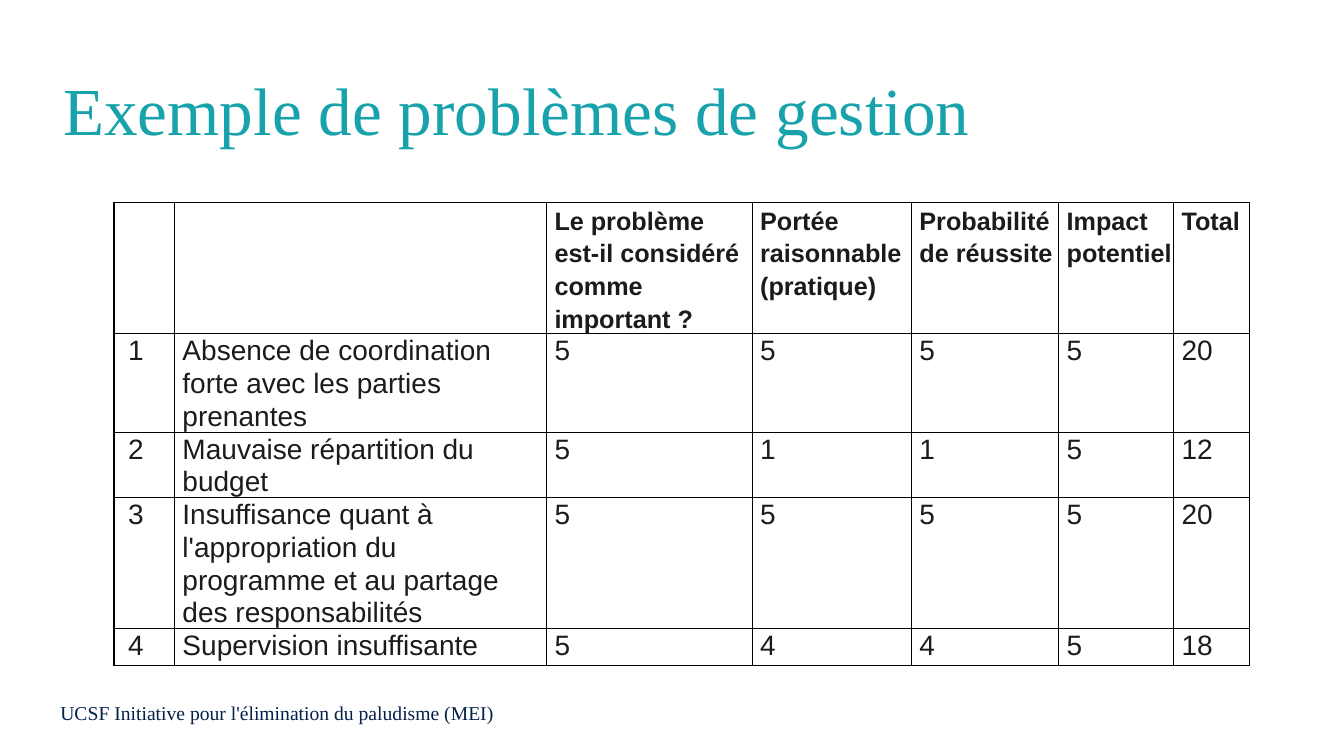
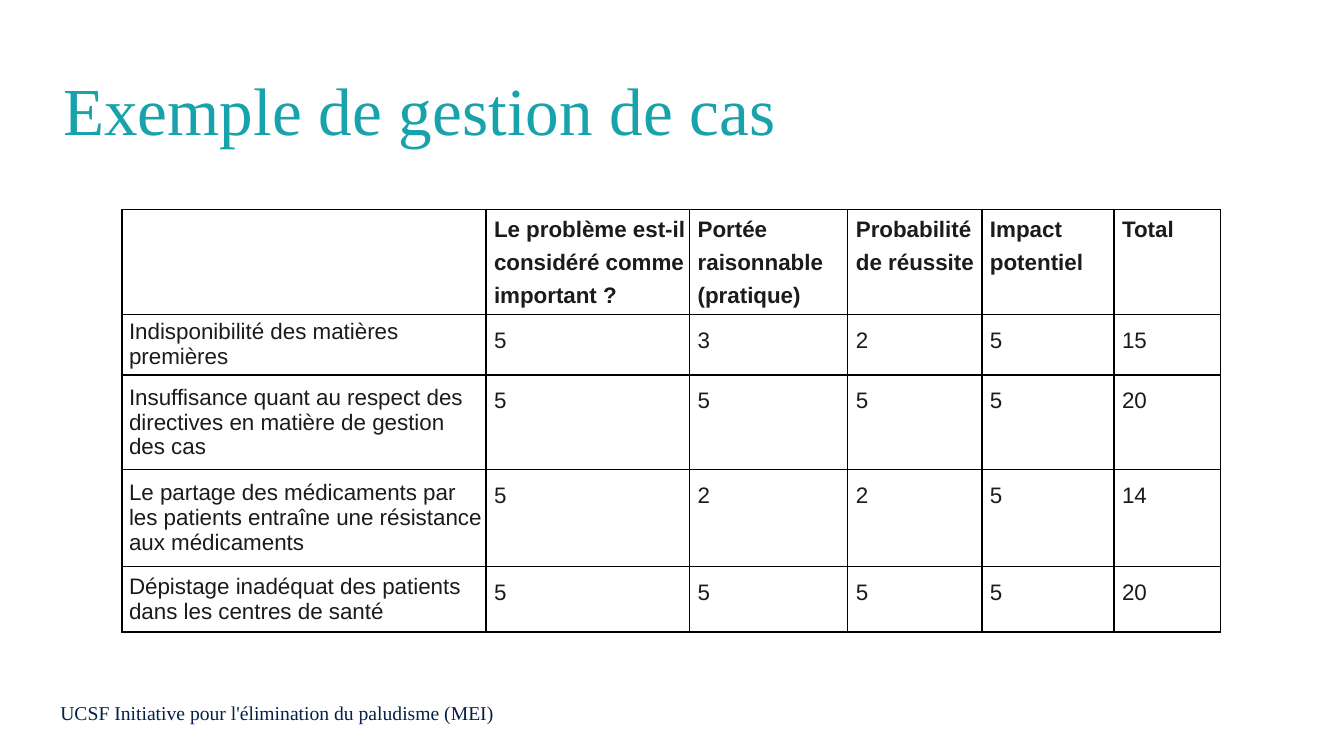
from dataclasses import dataclass

from lxml.etree import SubElement
from pptx import Presentation
from pptx.dml.color import RGBColor
from pptx.enum.text import MSO_ANCHOR
from pptx.oxml.ns import qn
from pptx.util import Inches, Pt


@dataclass(frozen=True)
class Theme:
    title_color: RGBColor = RGBColor(0x18, 0xA3, 0xAC)
    footer_color: RGBColor = RGBColor(0x05, 0x20, 0x49)
    text_color: RGBColor = RGBColor(0x1B, 0x1B, 0x1B)
    border_color: str = "000000"
    heading_font: str = "Times New Roman"
    table_font: str = "Arial"
    title_size: int = 48
    footer_size: int = 14
    border_width: int = 1
    line_pitch: float = 23.4
    tight_pitch: float = 14


@dataclass(frozen=True)
class CellStyle:
    size: int
    bold: bool = False
    pitch: object = None
    left: float = 0.08
    top: float = 0
    anchor: object = MSO_ANCHOR.TOP


THEME = Theme()
FOOTER = "UCSF Initiative pour l'élimination du paludisme (MEI)"
CRITERIA = [
    "Le problème est-il considéré comme important ?",
    "Portée raisonnable (pratique)",
    "Probabilité de réussite",
    "Impact potentiel",
    "Total",
]
MANAGEMENT_PROBLEMS = [
    ("Absence de coordination forte avec les parties prenantes", (5, 5, 5, 5)),
    ("Mauvaise répartition du budget", (5, 1, 1, 5)),
    ("Insuffisance quant à l'appropriation du programme et au partage des responsabilités", (5, 5, 5, 5)),
    ("Supervision insuffisante", (5, 4, 4, 5)),
]
CASE_PROBLEMS = [
    ("Indisponibilité des matières premières", (5, 3, 2, 5)),
    ("Insuffisance quant au respect des directives en matière de gestion des cas", (5, 5, 5, 5)),
    ("Le partage des médicaments par les patients entraîne une résistance aux médicaments", (5, 2, 2, 5)),
    ("Dépistage inadéquat des patients dans les centres de santé", (5, 5, 5, 5)),
]


def add_run(paragraph, text, font_name, size, color, bold=False):
    run = paragraph.add_run()
    run.text = text
    run.font.name = font_name
    run.font.size = Pt(size)
    run.font.color.rgb = color
    run.font.bold = bold


def add_heading_text(slide, text, box, size, color, anchor=MSO_ANCHOR.TOP, spacing=None):
    frame = slide.shapes.add_textbox(*map(Inches, box)).text_frame
    frame.word_wrap = True
    frame.vertical_anchor = anchor
    paragraph = frame.paragraphs[0]
    paragraph.line_spacing = spacing
    add_run(paragraph, text, THEME.heading_font, size, color)


def add_titled_slide(prs, title):
    slide = prs.slides.add_slide(prs.slide_layouts[6])
    add_heading_text(slide, FOOTER, (0.5, 6.9, 5.31, 0.34),
                     THEME.footer_size, THEME.footer_color)
    add_heading_text(slide, title, (0.53, 0.4, 12.45, 1.45),
                     THEME.title_size, THEME.title_color, MSO_ANCHOR.MIDDLE, 0.9)
    return slide


def draw_borders(cell):
    properties = cell._tc.get_or_add_tcPr()
    for side in ("lnL", "lnR", "lnT", "lnB"):
        line = SubElement(properties, qn(f"a:{side}"), w=str(Pt(THEME.border_width)))
        fill = SubElement(line, qn("a:solidFill"))
        SubElement(fill, qn("a:srgbClr"), val=THEME.border_color)


def fill_cell(cell, text, style):
    draw_borders(cell)
    cell.fill.background()
    cell.margin_left = Inches(style.left)
    cell.margin_top = Inches(style.top)
    cell.margin_right = cell.margin_bottom = 0
    cell.vertical_anchor = style.anchor
    if text:
        paragraph = cell.text_frame.paragraphs[0]
        paragraph.line_spacing = Pt(style.pitch) if style.pitch else None
        add_run(paragraph, text, THEME.table_font, style.size, THEME.text_color, style.bold)


def add_score_table(slide, left, top, widths, heights, rows, header_style, body_styles):
    frame = slide.shapes.add_table(
        len(rows), len(widths), Inches(left), Inches(top),
        Inches(sum(widths)), Inches(sum(heights)))
    table = frame.table
    table.first_row = table.horz_banding = False
    for column, width in zip(table.columns, widths):
        column.width = Inches(width)
    for row, height in zip(table.rows, heights):
        row.height = Inches(height)
    for row_index, texts in enumerate(rows):
        styles = body_styles if row_index else [header_style] * len(texts)
        for column_index, (text, style) in enumerate(zip(texts, styles)):
            fill_cell(table.cell(row_index, column_index), text, style)


def score_rows(problems):
    return [[problem, *map(str, scores), str(sum(scores))] for problem, scores in problems]


def add_management_slide(prs):
    slide = add_titled_slide(prs, "Exemple de problèmes de gestion")
    numbered = [[str(number), *row]
                for number, row in enumerate(score_rows(MANAGEMENT_PROBLEMS), 1)]
    header = CellStyle(18, bold=True, pitch=THEME.line_pitch)
    rank = CellStyle(20, pitch=THEME.line_pitch, left=0.14)
    body = CellStyle(20, pitch=THEME.line_pitch)
    add_score_table(
        slide, 1.13, 2.01,
        [0.6, 3.69, 2.04, 1.58, 1.46, 1.14, 0.75],
        [1.3, 0.97, 0.65, 1.3, 0.36],
        [["", "", *CRITERIA], *numbered],
        header, [rank] + [body] * 6)


def add_case_slide(prs):
    slide = add_titled_slide(prs, "Exemple de gestion de cas")
    header = CellStyle(16, bold=True, pitch=THEME.line_pitch)
    problem = CellStyle(16, left=0.07, anchor=MSO_ANCHOR.MIDDLE)
    score = CellStyle(16, pitch=THEME.tight_pitch, top=0.19)
    add_score_table(
        slide, 1.21, 2.08,
        [3.61, 2.02, 1.57, 1.33, 1.31, 1.06],
        [1.04, 0.6, 0.94, 0.96, 0.65],
        [["", *CRITERIA], *score_rows(CASE_PROBLEMS)],
        header, [problem] + [score] * 5)


def main():
    prs = Presentation()
    prs.slide_width = Inches(13.33)
    prs.slide_height = Inches(7.5)
    add_management_slide(prs)
    add_case_slide(prs)
    prs.save("out.pptx")


if __name__ == "__main__":
    main()
